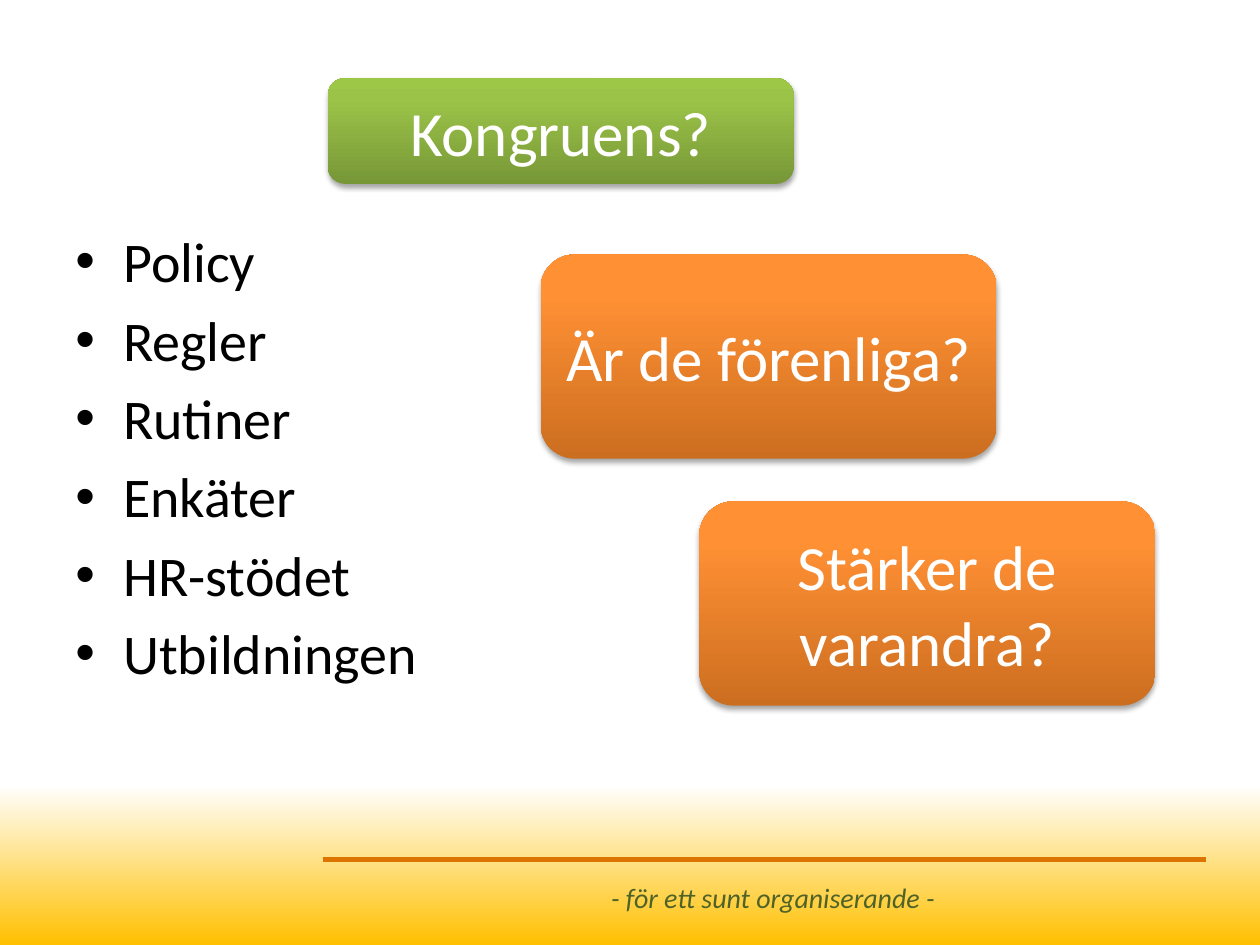
from pptx import Presentation
from pptx.dml.color import RGBColor
from pptx.enum.shapes import MSO_CONNECTOR, MSO_SHAPE
from pptx.enum.text import MSO_ANCHOR, PP_ALIGN
from pptx.oxml.ns import qn
from pptx.util import Inches, Pt
from lxml.etree import SubElement

TOPICS = ["Policy", "Regler", "Rutiner", "Enkäter", "HR-stödet", "Utbildningen"]
TAGLINE = "- för ett sunt organiserande -"
# text, gradient name, (left, top, width, height)
BOXES = [
    ("Är de förenliga?", "orange", (4.29, 2.02, 3.62, 1.62)),
    ("Stärker de varandra?", "orange", (5.55, 3.98, 3.62, 1.62)),
    ("Kongruens?", "green", (2.6, 0.62, 3.7, 0.84)),
]

THEME = {
    "font": "Calibri",
    "accent": "DE7400",
    "tagline": "4F6228",
    "text": "000000",
    "box_text": "FFFFFF",
    "sizes": {"body": 32, "box": 36, "tagline": 16},
    "gradients": {  # (position in percent, colour)
        "background": [(83, "FFFFFF"), (100, "FFC000")],
        "orange": [(0, "CC6E20"), (80, "FF9034"), (100, "FF9136")],
        "green": [(0, "779737"), (80, "9BC348"), (100, "9DC746")],
    },
}


def add_node(parent, tag, **attributes):
    values = {name: str(value) for name, value in attributes.items()}
    return SubElement(parent, qn(tag), values)


def set_gradient(fill, owner, name, degrees):
    """Fill with the theme's stops; degrees run clockwise from left to right."""
    fill.gradient()
    gradient = next(owner.iter(qn("a:gradFill")))
    for child in list(gradient):
        gradient.remove(child)
    stops = add_node(gradient, "a:gsLst")
    for position, colour in THEME["gradients"][name]:
        stop = add_node(stops, "a:gs", pos=position * 1000)
        add_node(stop, "a:srgbClr", val=colour)
    add_node(gradient, "a:lin", ang=degrees * 60000, scaled=0)


def style_font(font, size, colour):
    font.name = THEME["font"]
    font.size = Pt(THEME["sizes"][size])
    font.color.rgb = RGBColor.from_string(colour)


def add_text_frame(slide, place, anchor):
    frame = slide.shapes.add_textbox(*map(Inches, place)).text_frame
    frame.word_wrap = True
    frame.vertical_anchor = anchor
    return frame


def add_footer(slide):
    line = slide.shapes.add_connector(
        MSO_CONNECTOR.STRAIGHT, Inches(2.56), Inches(6.82), Inches(9.57), Inches(6.82))
    line.line.color.rgb = RGBColor.from_string(THEME["accent"])
    line.line.width = Pt(3)
    add_node(line._element.spPr, "a:effectLst")

    frame = add_text_frame(slide, (2.71, 6.97, 6.85, 0.31), MSO_ANCHOR.MIDDLE)
    paragraph = frame.paragraphs[0]
    paragraph.text = TAGLINE
    paragraph.alignment = PP_ALIGN.CENTER
    style_font(paragraph.font, "tagline", THEME["tagline"])
    paragraph.font.italic = True


def add_topics(slide):
    frame = add_text_frame(slide, (0.5, 1.75, 9, 4.28), MSO_ANCHOR.TOP)
    for index, topic in enumerate(TOPICS):
        paragraph = frame.add_paragraph() if index else frame.paragraphs[0]
        paragraph.text = topic
        style_font(paragraph.font, "body", THEME["text"])
        properties = paragraph._p.get_or_add_pPr()
        properties.set("marL", str(Inches(0.38)))
        properties.set("indent", str(Inches(-0.38)))
        bullet_font = properties.makeelement(qn("a:buFont"), {"typeface": "Arial"})
        bullet = properties.makeelement(qn("a:buChar"), {"char": "•"})
        spacing = properties.makeelement(qn("a:spcBef"), {})
        add_node(spacing, "a:spcPct", val=20000)
        for position, node in enumerate((spacing, bullet_font, bullet)):
            properties.insert(position, node)


def add_box(slide, text, gradient, place):
    shape = slide.shapes.add_shape(MSO_SHAPE.ROUNDED_RECTANGLE, *map(Inches, place))
    properties = shape._element.spPr
    set_gradient(shape.fill, properties, gradient, 270)
    shape.line.fill.background()
    shape.shadow.inherit = False
    shadow = add_node(properties.find(qn("a:effectLst")), "a:outerShdw", blurRad=Pt(3.1),
                      dist=Pt(1.8), dir=90 * 60000, rotWithShape=0)
    colour = add_node(shadow, "a:srgbClr", val="000000")
    add_node(colour, "a:alpha", val=35000)

    frame = shape.text_frame
    frame.word_wrap = True
    frame.vertical_anchor = MSO_ANCHOR.MIDDLE
    paragraph = frame.paragraphs[0]
    paragraph.text = text
    paragraph.alignment = PP_ALIGN.CENTER
    style_font(paragraph.font, "box", THEME["box_text"])


def main():
    presentation = Presentation()
    presentation.slide_width, presentation.slide_height = Inches(10), Inches(7.5)
    slide = presentation.slides.add_slide(presentation.slide_layouts[6])
    set_gradient(slide.background.fill, slide._element, "background", 90)
    add_footer(slide)
    add_topics(slide)
    for box in BOXES:
        add_box(slide, *box)
    presentation.save("out.pptx")


if __name__ == "__main__":
    main()
